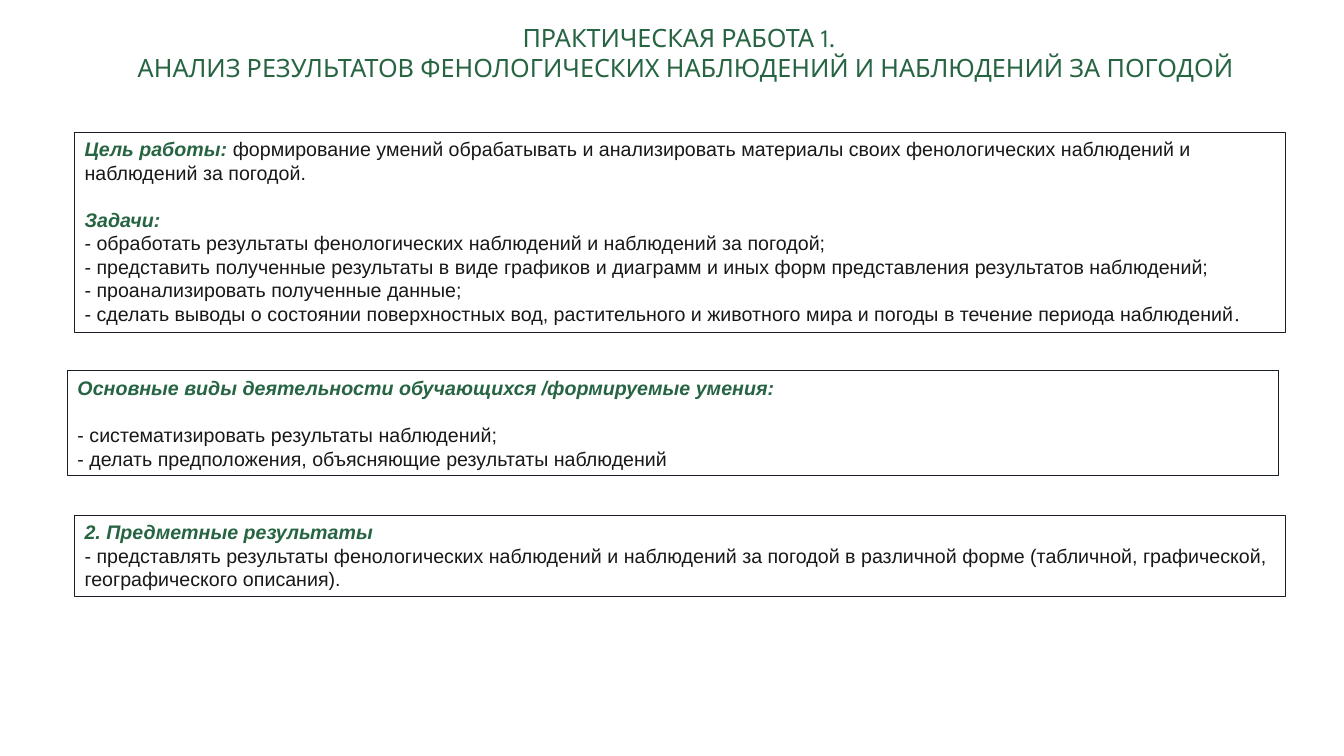
from pptx import Presentation
from pptx.dml.color import RGBColor
from pptx.enum.shapes import MSO_SHAPE
from pptx.enum.text import MSO_ANCHOR, MSO_AUTO_SIZE, PP_ALIGN
from pptx.util import Inches, Pt

RECTANGLE = MSO_SHAPE.RECTANGLE
TOP, MIDDLE = MSO_ANCHOR.TOP, MSO_ANCHOR.MIDDLE
LEFT, CENTER = PP_ALIGN.LEFT, PP_ALIGN.CENTER
NO_AUTOFIT = MSO_AUTO_SIZE.NONE

GREEN, DARK, BORDER = "266442", "181818", "191F27"
HEADING = {"name": "Arial", "size": Pt(14), "bold": True, "italic": True}
BODY = {"name": "Arial", "size": Pt(14), "bold": False, "italic": False}
FULL_STOP = {**BODY, "name": "Times New Roman"}
TITLE = {"name": "League Spartan", "size": Pt(18), "bold": False}
LINE_PITCH = Pt(16.8)


def rgb(value):
    return RGBColor.from_string(value)


def add_run(paragraph, text, font_values, color):
    run = paragraph.add_run()
    run.text = text
    for attribute, value in font_values.items():
        setattr(run.font, attribute, value)
    run.font.color.rgb = rgb(color)


prs = Presentation()
prs.slide_width, prs.slide_height = Inches(13.33), Inches(7.5)
slide = prs.slides.add_slide(prs.slide_layouts[5])

# Title
title = slide.shapes.title
title.left, title.top = Inches(0.74), Inches(0.17)
title.width, title.height = Inches(12.12), Inches(0.71)
title_frame = title.text_frame
title_frame.auto_size = NO_AUTOFIT
title_frame.vertical_anchor = MIDDLE
title_lines = [
    "ПРАКТИЧЕСКАЯ РАБОТА 1.  ",
    "АНАЛИЗ РЕЗУЛЬТАТОВ ФЕНОЛОГИЧЕСКИХ НАБЛЮДЕНИЙ И НАБЛЮДЕНИЙ ЗА ПОГОДОЙ",
]
for i, line in enumerate(title_lines):
    paragraph = title_frame.add_paragraph() if i else title_frame.paragraphs[0]
    paragraph.alignment = CENTER
    paragraph.line_spacing = Pt(21.5)
    add_run(paragraph, line, TITLE, GREEN)

# Framed sections: left, top, height, then paragraphs as
# (gap before, heading, body text, closing mark)
sections = [
    (0.74, 1.31, 1.99, [
        (False, "Цель работы: ", "формирование умений обрабатывать и анализировать "
         "материалы своих фенологических наблюдений и наблюдений за погодой.", ""),
        (True, "Задачи:", "", ""),
        (False, "", "- обработать результаты фенологических наблюдений "
         "и наблюдений за погодой;", ""),
        (False, "", "- представить полученные результаты в виде графиков и диаграмм "
         "и иных форм представления результатов наблюдений;", ""),
        (False, "", "- проанализировать полученные данные;", ""),
        (False, "", "- сделать выводы о состоянии поверхностных вод, растительного "
         "и животного мира и погоды в течение периода наблюдений", "."),
    ]),
    (0.67, 3.68, 1.04, [
        (False, "Основные виды деятельности обучающихся /формируемые умения:", "", ""),
        (True, "", "- систематизировать результаты наблюдений;", ""),
        (False, "", "- делать предположения, объясняющие результаты наблюдений", ""),
    ]),
    (0.74, 5.11, 0.81, [
        (False, "2. Предметные результаты", "", ""),
        (False, "", "- представлять результаты фенологических наблюдений и наблюдений "
         "за погодой в различной форме (табличной, графической, "
         "географического описания).", ""),
    ]),
]
for left, top, height, paragraphs in sections:
    section = slide.shapes.add_shape(
        RECTANGLE, Inches(left), Inches(top), Inches(12.01), Inches(height))
    section.shadow.inherit = False
    section.fill.background()
    section.line.color.rgb = rgb(BORDER)
    section.line.width = Pt(0.75)
    frame = section.text_frame
    frame.word_wrap = True
    frame.auto_size = NO_AUTOFIT
    frame.vertical_anchor = TOP
    for i, (gap, heading, body, closing) in enumerate(paragraphs):
        paragraph = frame.add_paragraph() if i else frame.paragraphs[0]
        paragraph.alignment = LEFT
        paragraph.line_spacing = LINE_PITCH
        if gap:
            paragraph.space_before = LINE_PITCH
        for text, font_values, color in ((heading, HEADING, GREEN),
                                         (body, BODY, DARK),
                                         (closing, FULL_STOP, DARK)):
            if text:
                add_run(paragraph, text, font_values, color)

prs.save("out.pptx")
